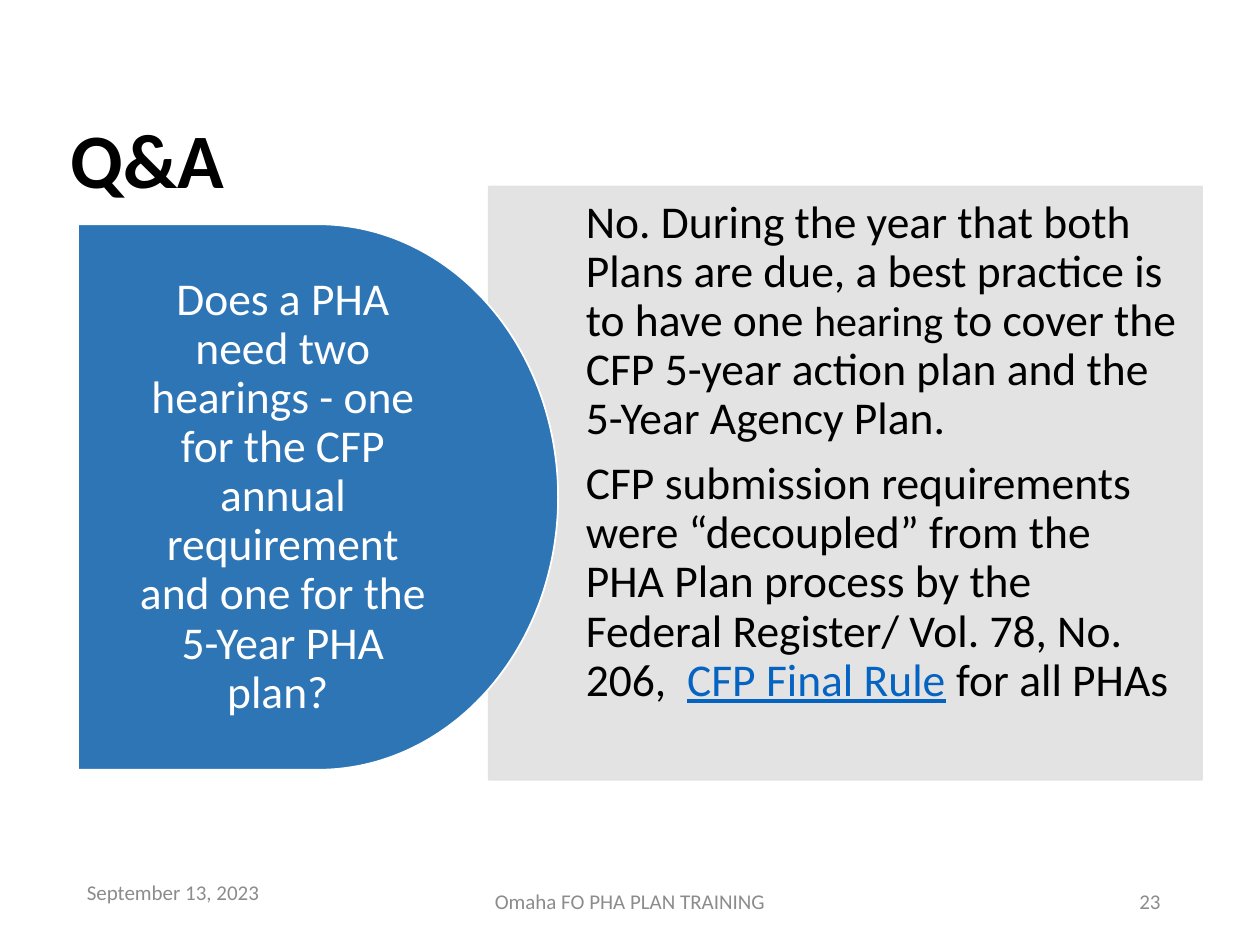
from dataclasses import dataclass

import pptx
import pptx.dml.color
import pptx.enum.shapes
import pptx.enum.text
import pptx.oxml
import pptx.oxml.ns
import pptx.util
from pptx.util import Inches, Pt

ALIGN = pptx.enum.text.PP_ALIGN
ANCHOR = pptx.enum.text.MSO_ANCHOR
SHAPE = pptx.enum.shapes.MSO_SHAPE


@dataclass(frozen=True)
class Theme:
    font: str = "Calibri"
    ink: str = "000000"
    white: str = "FFFFFF"
    blue: str = "2E75B6"
    panel: str = "E1E1E1"
    link: str = "0563C1"
    muted: str = "8C8C8C"
    title_size: int = 44
    body_size: int = 26
    small_body_size: int = 24
    footer_size: int = 12


@dataclass(frozen=True)
class Box:
    left: float
    top: float
    width: float
    height: float

    def emu(self):
        return [Inches(v) for v in (self.left, self.top, self.width, self.height)]


@dataclass(frozen=True)
class Footer:
    text: str
    box: Box
    align: ALIGN


@dataclass(frozen=True)
class Run:
    text: str
    size: int | None = None
    link: bool = False


THEME = Theme()
FOOTERS = [
    Footer("September 13, 2023", Box(0.59, 6.88, 2.25, 0.4), ALIGN.LEFT),
    Footer("Omaha FO PHA PLAN TRAINING", Box(3.31, 6.95, 3.38, 0.4), ALIGN.CENTER),
    Footer("23", Box(7.06, 6.95, 2.25, 0.4), ALIGN.RIGHT),
]
QUESTION = [[Run("Does a PHA need two hearings - one for the CFP annual requirement "
                 "and one for the 5-Year PHA plan? ")]]
ANSWER = [
    [Run("No. During the year that both Plans are due, a best practice is to have one "),
     Run("hearing", size=THEME.small_body_size),
     Run(" to cover the CFP 5-year action plan and the 5-Year Agency Plan.")],
    [Run("CFP submission requirements were “decoupled” from the PHA Plan process by the "
         "Federal Register/ Vol. 78, No. 206,  "),
     Run("CFP Final Rule", link=True),
     Run(" for all PHAs")],
]


def rgb(color: str):
    return pptx.dml.color.RGBColor.from_string(color)


def style(p, size: int, color: str, align=ALIGN.LEFT, bold=False):
    p.alignment = align
    p.font.name = THEME.font
    p.font.size = Pt(size)
    p.font.bold = bold
    p.font.color.rgb = rgb(color)


def set_frame(tf, anchor, insets=(0.1, 0.05, 0.1, 0.05)):
    """Insets are left, top, right and bottom, in inches."""
    tf.word_wrap = True
    tf.auto_size = pptx.enum.text.MSO_AUTO_SIZE.NONE
    tf.vertical_anchor = anchor
    tf.margin_left, tf.margin_top, tf.margin_right, tf.margin_bottom = map(Inches, insets)


def add_panel(slide, kind, box: Box, fill: str, line: str):
    sp = slide.shapes.add_shape(kind, *box.emu())
    sp.shadow.inherit = False
    sp.fill.solid()
    sp.fill.fore_color.rgb = rgb(fill)
    sp.line.color.rgb = rgb(line)
    sp.line.width = Pt(1)
    return sp


def set_opacity(sp, percent: int):
    """Apply the opacity to both fill and line."""
    for color in sp._element.spPr.iter(pptx.oxml.ns.qn("a:srgbClr")):
        alpha = pptx.oxml.parse_xml(
            f'<a:alpha {pptx.oxml.ns.nsdecls("a")} val="{percent * 1000}"/>')
        color.append(alpha)


def write_paragraphs(tf, paragraphs: list[list[Run]], color: str, align):
    for i, runs in enumerate(paragraphs):
        p = tf.add_paragraph() if i else tf.paragraphs[0]
        style(p, THEME.body_size, color, align)
        p.line_spacing = 0.9
        p.space_after = Pt(9)
        for run in runs:
            r = p.add_run()
            r.text = run.text
            if run.size:
                r.font.size = Pt(run.size)
            if run.link:
                r.font.color.rgb = rgb(THEME.link)
                r.font.underline = True


def add_title(slide, text: str, box: Box):
    title = slide.shapes.title
    title.left, title.top, title.width, title.height = box.emu()
    set_frame(title.text_frame, ANCHOR.MIDDLE)
    title.text_frame.text = text
    p = title.text_frame.paragraphs[0]
    style(p, THEME.title_size, THEME.ink, bold=True)
    p.line_spacing = 0.9


def add_footer(slide, footer: Footer):
    tf = slide.shapes.add_textbox(*footer.box.emu()).text_frame
    set_frame(tf, ANCHOR.MIDDLE)
    tf.text = footer.text
    style(tf.paragraphs[0], THEME.footer_size, THEME.muted, footer.align)


def main():
    prs = pptx.Presentation()
    prs.slide_width, prs.slide_height = Inches(10), Inches(7.5)
    slide = prs.slides.add_slide(prs.slide_layouts.get_by_name("Title Only"))

    add_title(slide, "Q&A", Box(0.46, 0.57, 8.62, 1.45))
    for footer in FOOTERS:
        add_footer(slide, footer)

    answer = add_panel(slide, SHAPE.RECTANGLE, Box(3.88, 1.48, 5.66, 4.71),
                       THEME.panel, THEME.panel)
    set_opacity(answer, 90)
    set_frame(answer.text_frame, ANCHOR.TOP, (0.77, 0.1, 0.2, 0.2))
    write_paragraphs(answer.text_frame, ANSWER, THEME.ink, ALIGN.LEFT)

    question = add_panel(slide, SHAPE.FLOWCHART_DELAY, Box(0.62, 1.78, 3.81, 4.33),
                         THEME.blue, THEME.white)
    set_frame(question.text_frame, ANCHOR.MIDDLE, (0.47,) * 4)
    write_paragraphs(question.text_frame, QUESTION, THEME.white, ALIGN.CENTER)

    prs.save("out.pptx")


if __name__ == "__main__":
    main()
